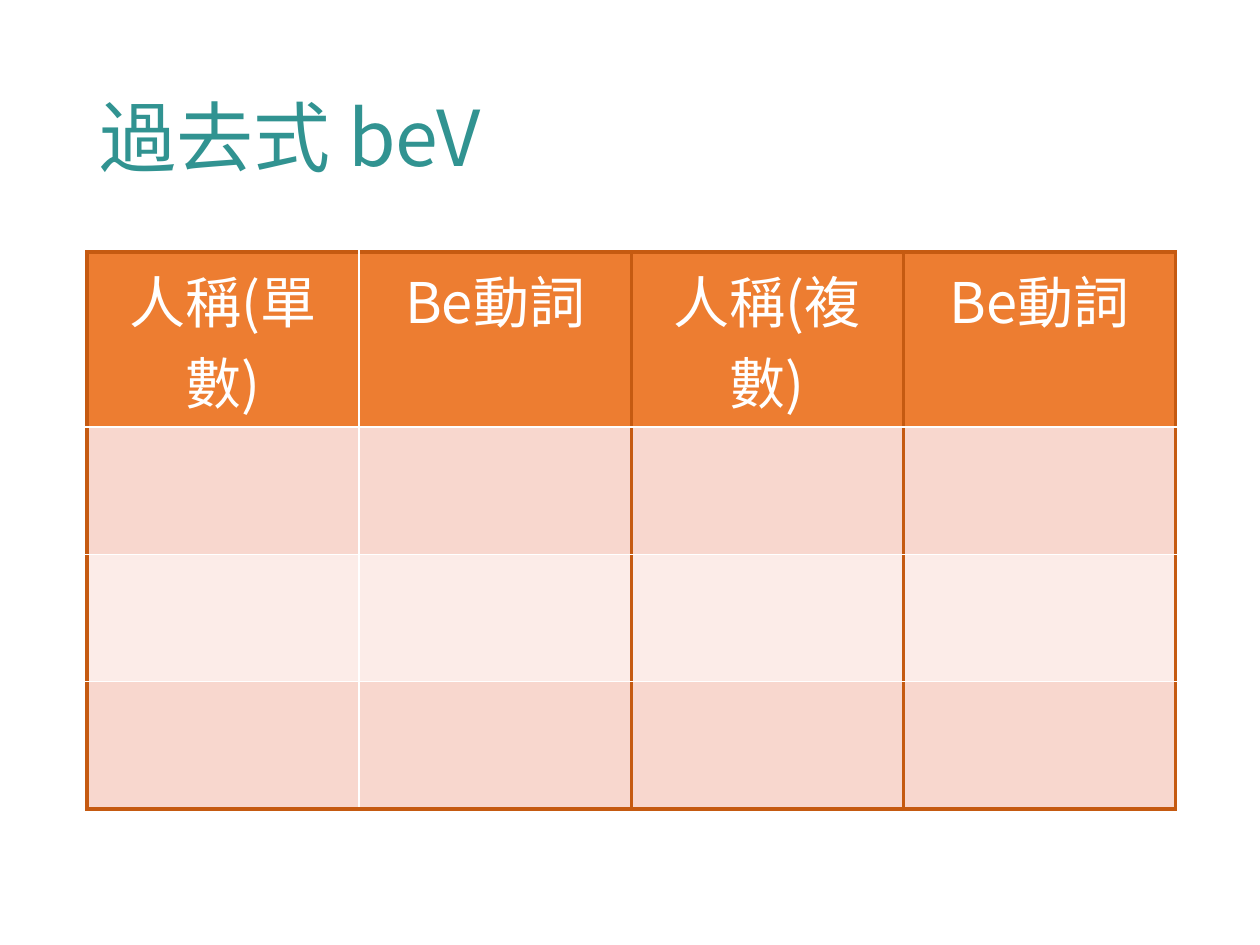
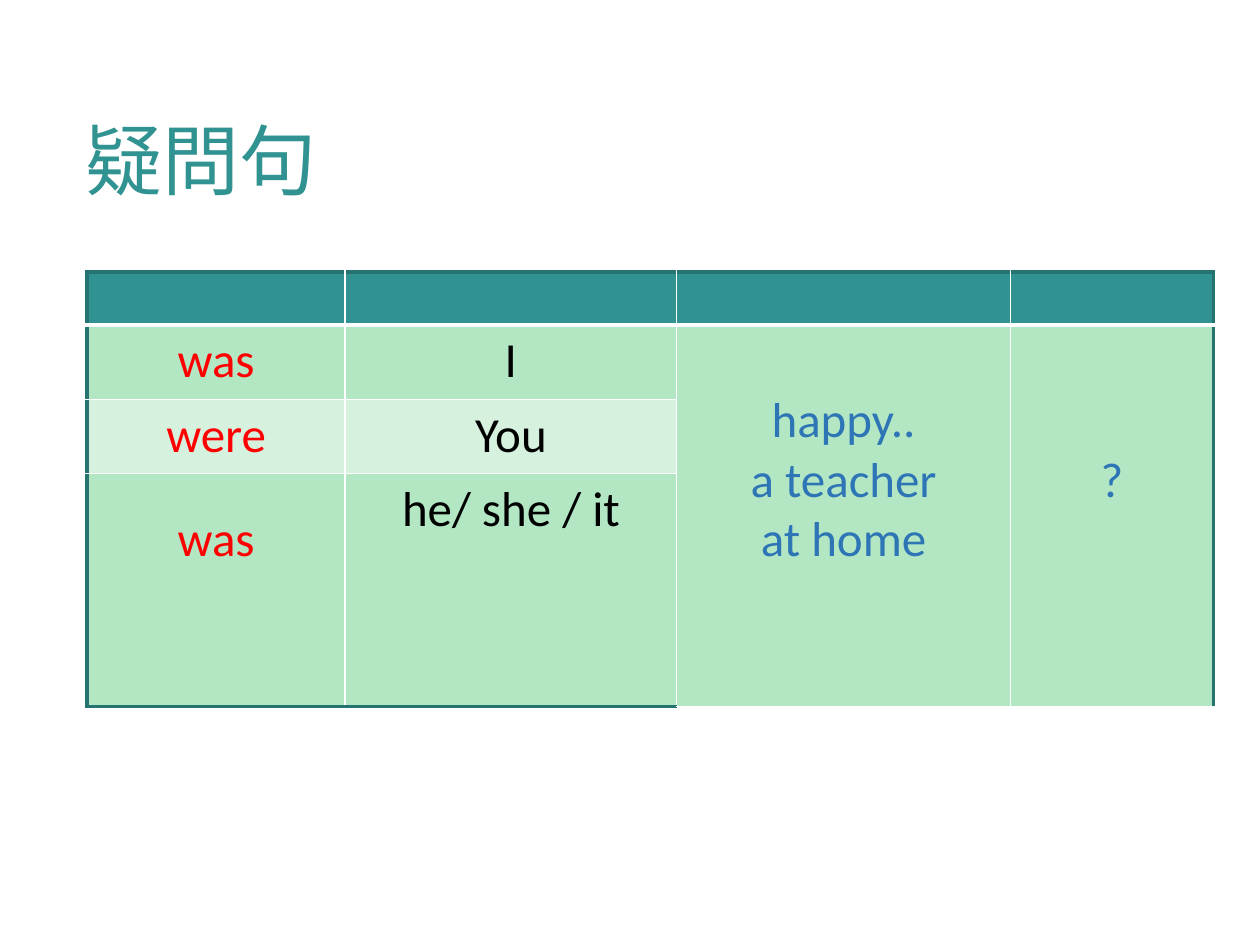
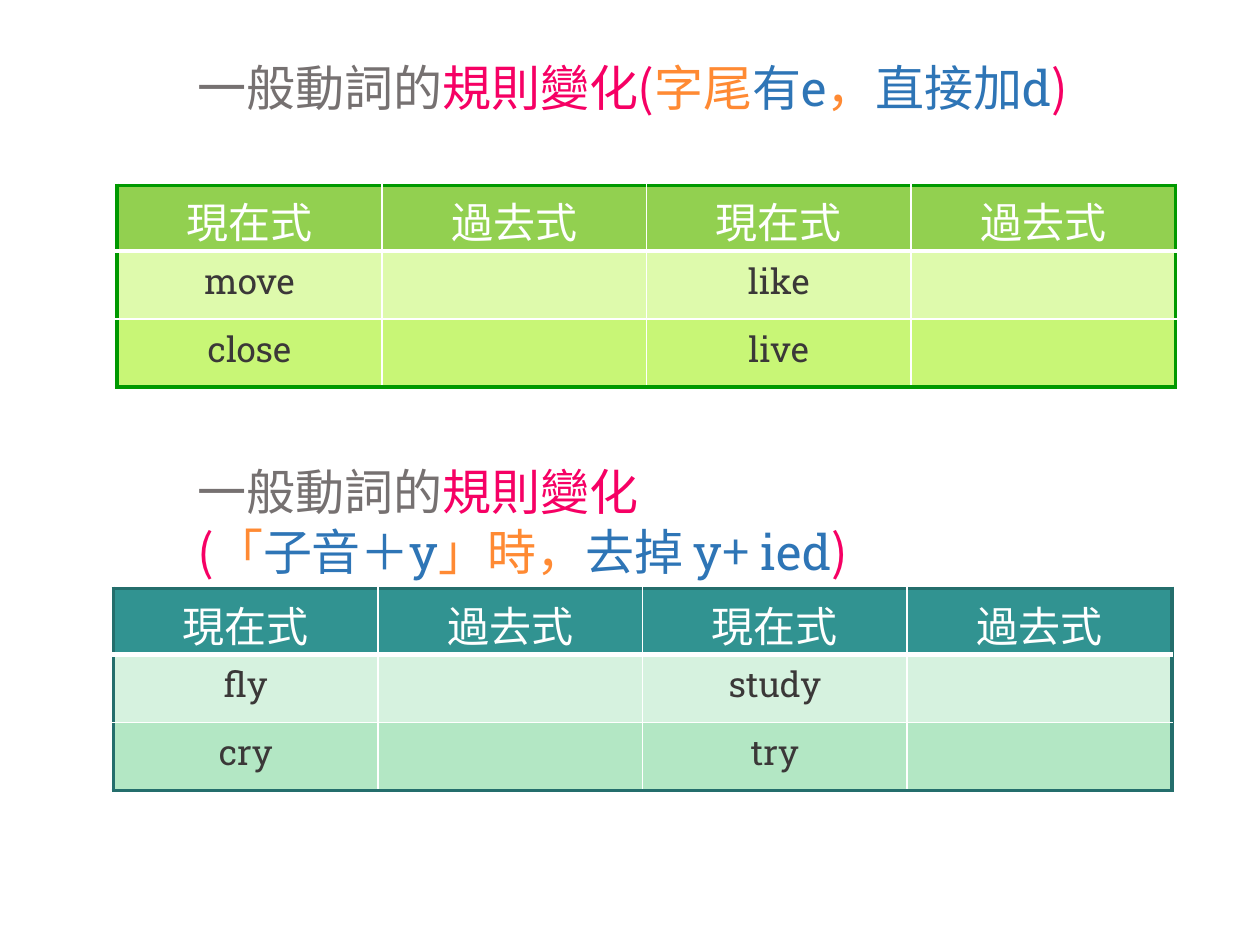
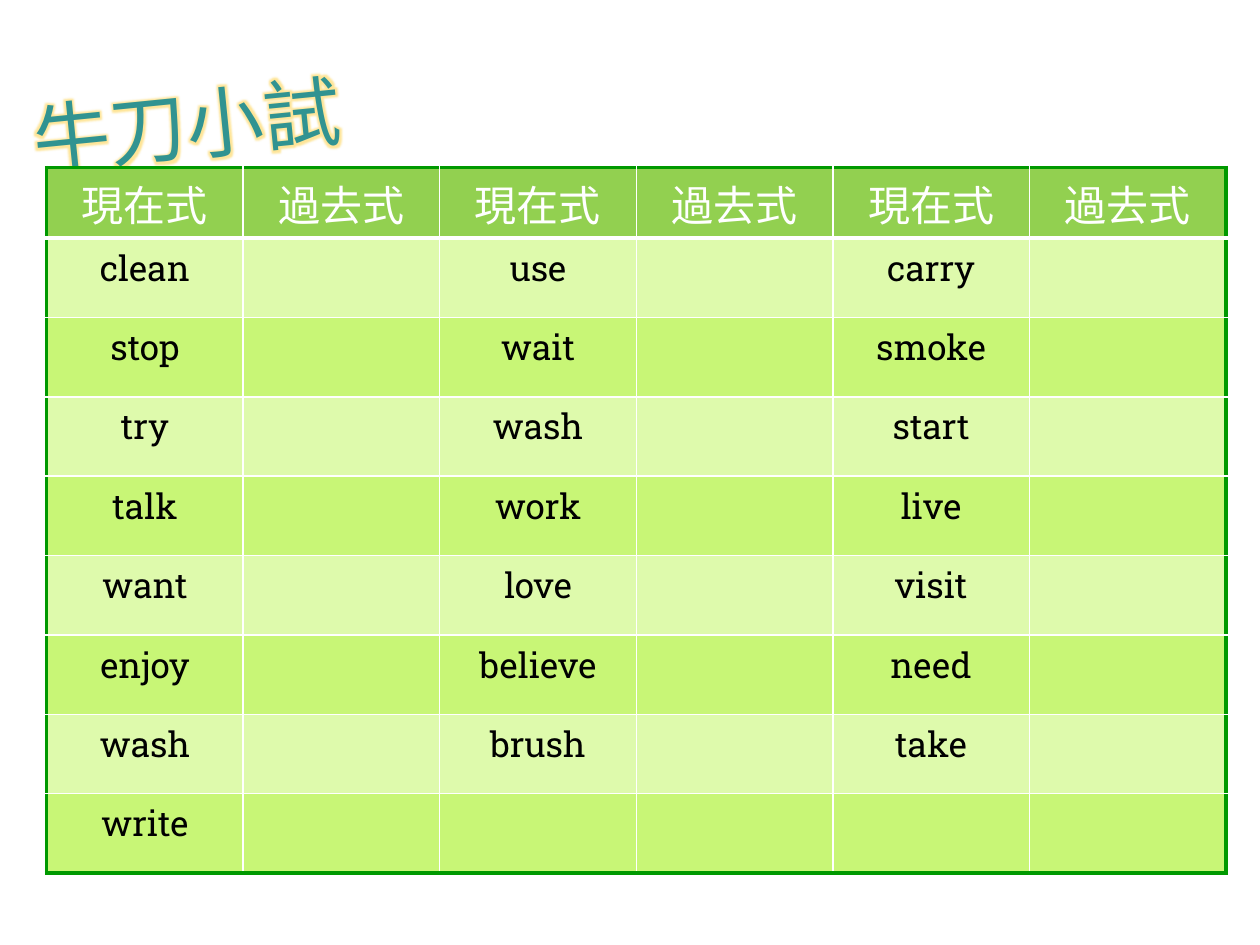
import pptx
import pptx.util
import pptx.dml.color
import pptx.enum.text
import pptx.oxml
import pptx.oxml.ns
from lxml import etree

Inches, Pt = pptx.util.Inches, pptx.util.Pt
TEXT = pptx.enum.text
CJK, SLAB, SANS = "Noto Sans CJK JP", "Roboto Slab", "Calibri"
WHITE, BLACK, GRAY, DARK = "FFFFFF", "000000", "767171", "3B3838"
TEAL, BLUE, RED, PINK, AMBER = "319391", "2E75B6", "FF0000", "F60064", "FF8A33"

# Table themes: header fill, frame line, body bands
ORANGE = {"head": "ED7D31", "edge": "C55A11", "bands": ("F8D7CE", "FCECE8")}
MINT = {"head": TEAL, "edge": "267472", "bands": ("B3E7C4", "D6F2DF")}
PALE = {"head": TEAL, "edge": "246E6C", "bands": ("D6F2DF", "B3E7C4")}
LIME = {"head": "92D050", "edge": "009900", "bands": ("DEFAAC", "C8F676")}

TENSES = ["現在式", "過去式"]


def color(code):
    return pptx.dml.color.RGBColor.from_string(code)


def node(parent, tag, **attrs):
    return etree.SubElement(parent, pptx.oxml.ns.qn(tag), attrs)


def add_run(par, text, size, font, ink):
    """Add one run, with the same face for Latin and East Asian text."""
    run = par.add_run()
    run.text = text
    form = {"size": Pt(size), "name": font, "bold": False}
    for key, value in form.items():
        setattr(run.font, key, value)
    run.font.color.rgb = color(ink)
    node(run.font._element, "a:ea", typeface=font)
    return run


def add_title(slide, text, box, turn=0):
    shape = slide.shapes.title
    place = dict(zip(("left", "top", "width", "height"), map(Inches, box)))
    for key, value in place.items():
        setattr(shape, key, value)
    shape.rotation = turn
    frame = shape.text_frame
    form = {"word_wrap": True, "auto_size": TEXT.MSO_AUTO_SIZE.NONE,
            "vertical_anchor": TEXT.MSO_ANCHOR.MIDDLE}
    for key, value in form.items():
        setattr(frame, key, value)
    par = frame.paragraphs[0]
    par.alignment = TEXT.PP_ALIGN.LEFT
    par.line_spacing = 0.9
    return add_run(par, text, 44, CJK, TEAL)


def add_glow(run, ink, size):
    """Put a soft glow around the letters, right after their fill."""
    props = run.font._element
    effect = node(props, "a:effectLst")
    glow = node(effect, "a:glow", rad=str(Pt(size)))
    node(glow, "a:srgbClr", val=ink)
    props.find(pptx.oxml.ns.qn("a:solidFill")).addnext(effect)


def add_rule(slide, box, lines):
    """Add a grammar rule; each line is a list of (text, colour, font)."""
    frame = slide.shapes.add_textbox(*map(Inches, box)).text_frame
    frame.word_wrap = True
    for i, line in enumerate(lines):
        par = frame.add_paragraph() if i else frame.paragraphs[0]
        par.line_spacing = Pt(34)
        for text, ink, font in line:
            add_run(par, text, 28, font, ink)


def set_edge(cell, side, ink, width):
    line = node(cell._tc.get_or_add_tcPr(), "a:ln" + side, w=str(Pt(width)))
    node(node(line, "a:solidFill"), "a:srgbClr", val=ink)


def fill_cell(cell, text, size, font, ink, pitch=None):
    for i, line in enumerate(text.split("\n")):
        par = cell.text_frame.add_paragraph() if i else cell.text_frame.paragraphs[0]
        par.alignment = TEXT.PP_ALIGN.CENTER
        if pitch:
            par.line_spacing = Pt(pitch)
        if line:
            add_run(par, line, size, font, ink)


def add_grid(slide, spot, cols, rows, words, theme, head, body,
             inks=(BLACK,), rule=3, dark=(), spans=()):
    """Add a framed, banded table.

    head and body hold text formats, inks the body colours by column, rule the
    line under the header, dark the inner columns with a frame-coloured left
    line, spans the columns merged below the header.
    """
    size = (sum(cols), sum(rows))
    table = slide.shapes.add_table(len(rows), len(cols),
                                   *map(Inches, spot + size)).table
    table.first_row = table.horz_banding = False
    for col, width in zip(table.columns, cols):
        col.width = Inches(width)
    for row, height in zip(table.rows, rows):
        row.height = Inches(height)
    for c in spans:
        table.cell(1, c).merge(table.cell(len(rows) - 1, c))

    edge, frame = (theme["edge"], 2.25), {0, len(cols), *dark}
    levels = {0: edge, 1: (WHITE, rule), len(rows): edge}
    for r, line in enumerate(words):
        for c, text in enumerate(line):
            cell = table.cell(r, c)
            merged = c in spans and r > 0
            for side, n in (("L", c), ("R", c + 1)):
                set_edge(cell, side, *(edge if n in frame else (WHITE, 1)))
            for side, n in (("T", r), ("B", r + 1)):
                if not merged or n in levels:
                    set_edge(cell, side, *levels.get(n, (WHITE, 1)))
            cell.fill.solid()
            shade = theme["bands"][(r - 1) % 2] if r else theme["head"]
            cell.fill.fore_color.rgb = color(shade)
            if r:
                fill_cell(cell, text, ink=inks[c % len(inks)], **body)
            else:
                fill_cell(cell, text, ink=WHITE, **head)
    return table


def add_drill(slide, spot, cols, rows, verbs, theme, ink):
    """Add a verb table whose past-tense columns are left to fill in."""
    words = [TENSES * len(verbs[0])]
    words += [[text for verb in line for text in (verb, "")] for line in verbs]
    table = add_grid(slide, spot, cols, rows, words, theme,
                     {"size": 24, "font": CJK, "pitch": 29},
                     {"size": 20, "font": SLAB}, (ink,))
    for cell in table.rows[0].cells:
        cell.margin_top, cell.margin_bottom = Inches(0.12), 0


def main():
    deck = pptx.Presentation()
    deck.slide_width, deck.slide_height = Inches(10), Inches(7.5)
    titled, blank = deck.slide_layouts[5], deck.slide_layouts[6]

    # Past forms of be
    slide = deck.slides.add_slide(titled)
    add_title(slide, "過去式 beV", (0.69, 0.4, 8.62, 1.45))
    words = [["人稱(單數)", "Be動詞", "人稱(複數)", "Be動詞"]] + [[""] * 4] * 3
    big = {"size": 32, "font": CJK}
    add_grid(slide, (0.69, 2), [2.16] * 4, [0.71] + [1.01] * 3, words,
             ORANGE, big, big, rule=1, dark=(2, 3))

    # Questions
    slide = deck.slides.add_slide(titled)
    add_title(slide, "疑問句", (0.58, 0.58, 8.62, 1.45))
    words = [[""] * 4,
             ["was", "I", "happy..\na teacher\nat home", "?"],
             ["were", "You", "", ""],
             ["was", "he/ she / it", "", ""]]
    table = add_grid(slide, (0.69, 2.16), [2.05, 2.63, 2.65, 1.61],
                     [0.42, 0.59, 0.59, 1.85], words, MINT,
                     {"size": 18, "font": SANS}, {"size": 28, "font": SANS},
                     (RED, BLACK, BLUE, BLUE), spans=(2, 3))
    for r, c, pad in ((1, 2, 0.52), (1, 3, 1), (3, 0, 0.29)):
        table.cell(r, c).margin_top = Inches(pad)

    # Regular verbs: two spelling rules
    slide = deck.slides.add_slide(blank)
    topic = ("一般動詞的", GRAY, CJK)
    close = (")", PINK, CJK)
    cols, rows = [2.1] * 4, [0.48, 0.54, 0.54]
    add_rule(slide, (1.47, 0.4, 7.22, 1.04), [
        [topic, ("規則變化(", PINK, CJK), ("字尾", AMBER, CJK),
         ("有", BLUE, CJK), ("e", BLUE, SLAB), ("，", AMBER, CJK),
         ("直接加", BLUE, CJK), ("d", BLUE, SLAB), close]])
    add_drill(slide, (0.93, 1.47), cols, rows,
              [("move", "like"), ("close", "live")], LIME, DARK)
    add_rule(slide, (1.47, 3.61, 7.85, 1.04), [
        [topic, ("規則變化", PINK, CJK)],
        [("(", PINK, CJK), ("「", AMBER, CJK), ("子音＋", BLUE, CJK),
         ("y", BLUE, SLAB), ("」時，", AMBER, CJK), ("去掉 ", BLUE, CJK),
         ("y", BLUE, SLAB), ("+ ", BLUE, CJK), ("ied", BLUE, SLAB), close]])
    add_drill(slide, (0.9, 4.67), cols, rows,
              [("fly", "study"), ("cry", "try")], PALE, DARK)

    # Practice
    slide = deck.slides.add_slide(titled)
    run = add_title(slide, "牛刀小試", (0.16, 0.64, 2.7, 0.77), 354.3)
    add_glow(run, "FFE699", 5)
    verbs = [("clean", "use", "carry"), ("stop", "wait", "smoke"),
             ("try", "wash", "start"), ("talk", "work", "live"),
             ("want", "love", "visit"), ("enjoy", "believe", "need"),
             ("wash", "brush", "take"), ("write", "", "")]
    add_drill(slide, (0.37, 1.33), [1.56] * 6, [0.56] + [0.63] * 8,
              verbs, LIME, BLACK)

    deck.save("out.pptx")


if __name__ == "__main__":
    main()
